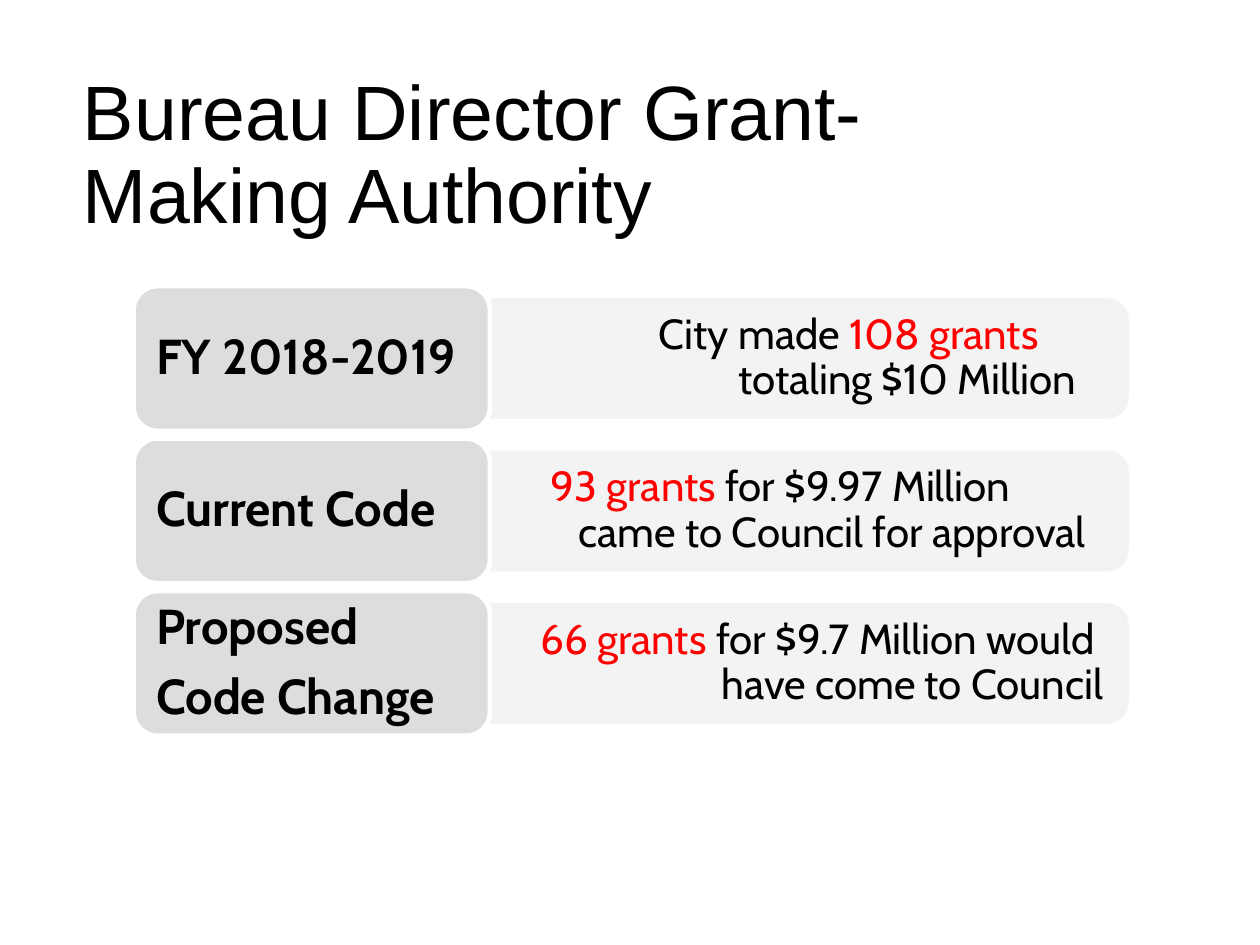
from lxml import etree
from pptx import Presentation, util as u
from pptx.dml.color import RGBColor
from pptx.enum import shapes, text
from pptx.oxml.ns import qn

# Content: label lines, then detail lines as (left indent, runs of (text, colour))
TITLE = "Bureau Director Grant-Making Authority"
ROWS = [
    (["FY 2018-2019"],
     [(1.2, [("City made ", "ink"), ("108 grants", "accent")]),
      (1.83, [("totaling $10 Million", "ink")])]),
    (["Current Code"],
     [(0.34, [("93 grants ", "accent"), ("for $9.97 Million", "ink")]),
      (0.56, [("came to Council for approval", "ink")])]),
    (["Proposed", "Code Change"],
     [(0.26, [("66 grants ", "accent"), ("for $9.7 Million would", "ink")]),
      (1.7, [("have come to Council", "ink")])]),
]

THEME = {
    "ink": "000000", "accent": "FF0000", "band": "F2F2F2", "label": "DDDDDD",
    "edge": "FFFFFF", "title_font": "Arial", "body_font": "Cabin",
    "title_size": 44, "label_size": 28, "detail_size": 24, "line_width": 2.75,
}

# Grid, in inches
WIDTH, HEIGHT = 10, 7.5
LEFT, TOP, PITCH = 1.06, 2.27, 1.21
LABEL_WIDTH, LABEL_HEIGHT = 2.83, 1.15
BAND_WIDTH, BAND_HEIGHT = 5.04, 0.92
BAND_LEFT = LEFT + LABEL_WIDTH + 0.01
PAD = 0.06


def color(name):
    return RGBColor.from_string(THEME[name])


def add_text_box(slide, left, top, width, height, insets, anchor):
    box = slide.shapes.add_textbox(*map(u.Inches, (left, top, width, height)))
    frame = box.text_frame
    frame.word_wrap = True
    frame.vertical_anchor = anchor
    (frame.margin_left, frame.margin_top,
     frame.margin_right, frame.margin_bottom) = map(u.Inches, insets)
    return frame


def add_run(paragraph, words, font, size, ink="ink", bold=False):
    run = paragraph.add_run()
    run.text = words
    run.font.name, run.font.size = THEME[font], u.Pt(THEME[size])
    run.font.bold = bold
    run.font.color.rgb = color(ink)


def add_panel(slide, kind, left, top, width, height, fill, edge):
    shape = slide.shapes.add_shape(kind, *map(u.Inches, (left, top, width, height)))
    shape.shadow.inherit = False
    shape.fill.solid()
    shape.fill.fore_color.rgb = color(fill)
    shape.line.color.rgb = color(edge)
    shape.line.width = u.Pt(THEME["line_width"])
    return shape


def add_band(slide, middle):
    # Drawn upright about its centre, then turned so the round end faces right
    shape = add_panel(slide, shapes.MSO_SHAPE.ROUND_2_SAME_RECTANGLE,
                      BAND_LEFT + (BAND_WIDTH - BAND_HEIGHT) / 2,
                      middle - BAND_WIDTH / 2, BAND_HEIGHT, BAND_WIDTH, "band", "band")
    shape.rotation = 90
    for fill in shape._element.spPr.iter(qn("a:srgbClr")):
        etree.SubElement(fill, qn("a:alpha"), val="90000")


def add_detail(slide, middle, lines):
    height = BAND_HEIGHT - 0.09
    frame = add_text_box(slide, BAND_LEFT, middle - height / 2, 5, height,
                         (0.13, PAD, 0, PAD), text.MSO_ANCHOR.MIDDLE)
    paragraph = frame.paragraphs[0]
    paragraph.line_spacing = 0.9
    paragraph.space_after = u.Pt(0.15 * THEME["detail_size"])
    # The second line sits at the margin, the first hangs to its left
    first, second = (u.Inches(indent) for indent, _ in lines)
    properties = paragraph._p.get_or_add_pPr()
    properties.set("marL", str(second))
    properties.set("indent", str(first - second))
    for index, (_, runs) in enumerate(lines):
        if index:
            paragraph.add_line_break()
        for words, ink in runs:
            add_run(paragraph, words, "body_font", "detail_size", ink)


def add_label(slide, top, lines):
    add_panel(slide, shapes.MSO_SHAPE.ROUNDED_RECTANGLE, LEFT, top,
              LABEL_WIDTH, LABEL_HEIGHT, "label", "edge")
    frame = add_text_box(slide, LEFT + PAD, top + PAD, LABEL_WIDTH - 2 * PAD,
                         LABEL_HEIGHT - 2 * PAD, (0.12, PAD, 0.12, PAD),
                         text.MSO_ANCHOR.MIDDLE)
    for index, words in enumerate(lines):
        paragraph = frame.add_paragraph() if index else frame.paragraphs[0]
        paragraph.line_spacing = 0.9
        paragraph.space_after = u.Pt(0.35 * THEME["label_size"])
        add_run(paragraph, words, "body_font", "label_size", bold=True)


def main():
    presentation = Presentation()
    presentation.slide_width, presentation.slide_height = u.Inches(WIDTH), u.Inches(HEIGHT)
    slide = presentation.slides.add_slide(presentation.slide_layouts[6])

    # Title
    frame = add_text_box(slide, 0.56, 0.51, 7.88, 1.09, (0.1, 0.08, 0.1, 0.05),
                         text.MSO_ANCHOR.TOP)
    frame.paragraphs[0].line_spacing = 0.9
    add_run(frame.paragraphs[0], TITLE, "title_font", "title_size")

    # Rows: band, detail text, then the label on top
    for index, (label, detail) in enumerate(ROWS):
        top = TOP + index * PITCH
        middle = top + LABEL_HEIGHT / 2
        add_band(slide, middle)
        add_detail(slide, middle, detail)
        add_label(slide, top, label)

    presentation.save("out.pptx")


if __name__ == "__main__":
    main()
